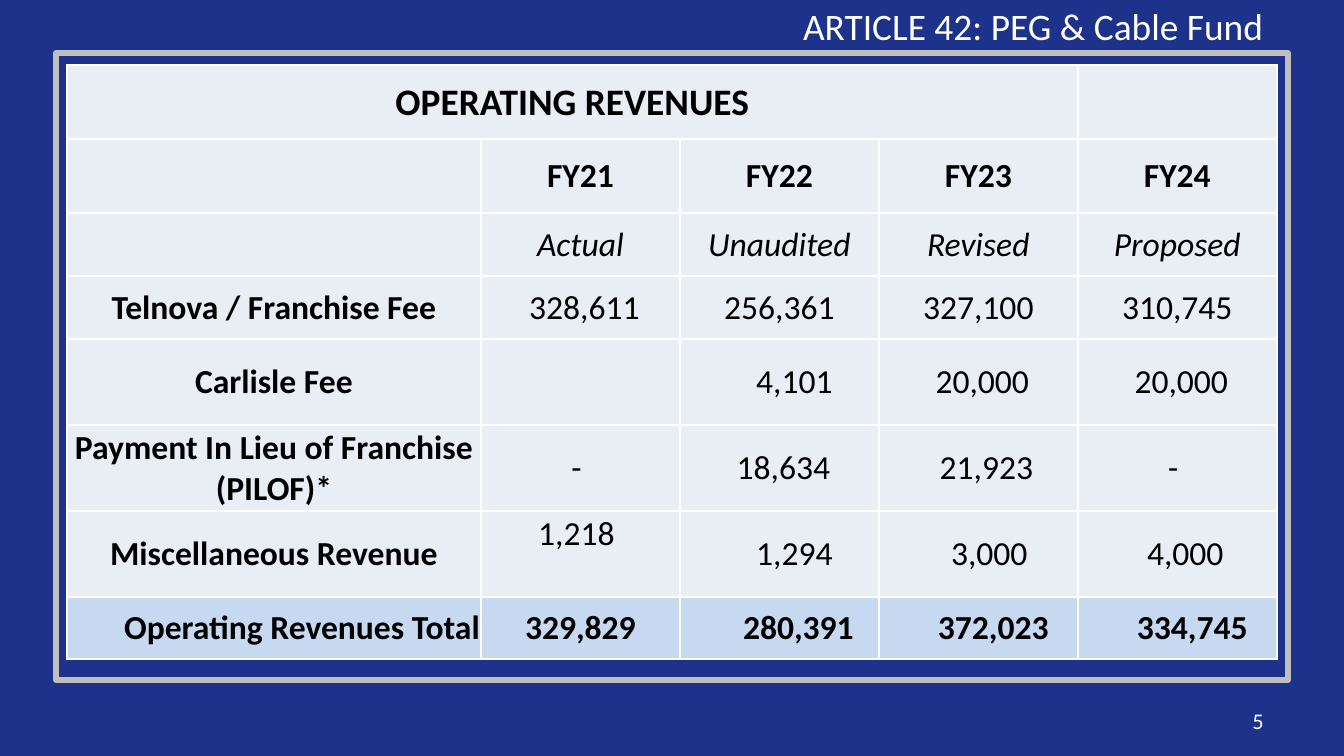
from dataclasses import dataclass

from lxml import etree
from pptx import Presentation
from pptx import util as u
from pptx.dml.color import RGBColor
from pptx.enum import shapes, text
from pptx.oxml.ns import qn

PX = 914400 / 134.4
CENTER, RIGHT = text.PP_ALIGN.CENTER, text.PP_ALIGN.RIGHT


@dataclass(frozen=True)
class Theme:
    font: str = "Calibri"
    background: str = "1D328B"
    frame: str = "BFBFBF"
    light: str = "FFFFFF"
    dark: str = "000000"
    cell: str = "E9EDF4"
    total: str = "C6D9F1"
    heading_size: int = 20
    body_size: int = 18
    small_size: int = 12


THEME = Theme()
COLUMNS = [414] + [199] * 4
ROWS = [74, 74, 63, 63, 86, 86, 86, 62]
YEARS = ["", "FY21", "FY22", "FY23", "FY24"]
STATUSES = ["", "Actual", "Unaudited", "Revised", "Proposed"]
# Each amount comes with its distance in px from the centre of the column.
REVENUES = [
    ("Telnova / Franchise Fee",
     [("328,611", 4), ("256,361", 0), ("327,100", 0), ("310,745", 0)]),
    ("Carlisle Fee",
     [("", 0), ("4,101", 15), ("20,000", 4), ("20,000", 4)]),
    ("Payment In Lieu of Franchise (PILOF)*",
     [("-", -4), ("18,634", 4), ("21,923", 8), ("-", -4)]),
    ("Miscellaneous Revenue",
     [("1,218", -4), ("1,294", 15), ("3,000", 11), ("4,000", 8)]),
    ("Operating Revenues Total",
     [("329,829", 0), ("280,391", 19), ("372,023", 15), ("334,745", 15)]),
]


def px(length):
    return u.Emu(round(length * PX))


def color(value):
    return RGBColor.from_string(value)


def write(frame, words, size=THEME.body_size, ink=THEME.dark, align=CENTER,
          bold=False, italic=False):
    paragraph = frame.paragraphs[0]
    paragraph.alignment = align
    run = paragraph.add_run()
    run.text = words
    font = run.font
    font.name, font.size = THEME.font, u.Pt(size)
    font.bold, font.italic = bold, italic
    font.color.rgb = color(ink)


def place(shape, left, top, width, height):
    shape.left, shape.top = px(left), px(top)
    shape.width, shape.height = px(width), px(height)


def add_title(slide, words):
    title = slide.shapes.title
    place(title, 672, -4, 605, 59)
    frame = title.text_frame
    frame.word_wrap = True
    frame.auto_size = text.MSO_AUTO_SIZE.SHAPE_TO_FIT_TEXT
    frame.vertical_anchor = text.MSO_ANCHOR.TOP
    write(frame, words, size=THEME.heading_size, ink=THEME.light, align=RIGHT)


def add_frame(slide):
    frame = slide.shapes.add_shape(
        shapes.MSO_SHAPE.RECTANGLE, px(56), px(53), px(1232), px(627))
    frame.shadow.inherit = False
    frame.fill.background()
    frame.line.color.rgb = color(THEME.frame)
    frame.line.width = u.Pt(3)


def add_page_number(slide, number):
    box = slide.shapes.add_textbox(px(964), px(701), px(313), px(40))
    frame = box.text_frame
    frame.word_wrap = True
    frame.vertical_anchor = text.MSO_ANCHOR.MIDDLE
    write(frame, number, size=THEME.small_size, ink=THEME.light, align=RIGHT)


def add_borders(cell):
    properties = cell._tc.get_or_add_tcPr()
    for side in ("lnL", "lnR", "lnT", "lnB"):
        line = etree.SubElement(properties, qn(f"a:{side}"), w=str(u.Pt(1)))
        fill = etree.SubElement(line, qn("a:solidFill"))
        etree.SubElement(fill, qn("a:srgbClr"), val=THEME.light)


def fill_cell(cell, words, shift=0, rise=0, **style):
    """Write a cell, moving its text right by shift and up by rise px."""
    cell.vertical_anchor = text.MSO_ANCHOR.MIDDLE
    cell.margin_left = px(1 + 2 * max(shift, 0))
    cell.margin_right = px(1 + 2 * max(-shift, 0))
    cell.margin_top, cell.margin_bottom = px(1), px(2 * rise)
    if words:
        write(cell.text_frame, words, **style)


def add_revenue_table(slide):
    table = slide.shapes.add_table(
        len(ROWS), len(COLUMNS), px(67), px(65),
        px(sum(COLUMNS)), px(sum(ROWS))).table
    for column, width in zip(table.columns, COLUMNS):
        column.width = px(width)
    last = len(ROWS) - 1
    for index, (row, height) in enumerate(zip(table.rows, ROWS)):
        row.height = px(height)
        for cell in row.cells:
            add_borders(cell)
            cell.fill.solid()
            cell.fill.fore_color.rgb = color(
                THEME.total if index == last else THEME.cell)

    table.cell(0, 0).merge(table.cell(0, 3))
    fill_cell(table.cell(0, 0), "OPERATING REVENUES",
              size=THEME.heading_size, bold=True)
    for column, (year, status) in enumerate(zip(YEARS, STATUSES)):
        fill_cell(table.cell(1, column), year, bold=True)
        fill_cell(table.cell(2, column), status, italic=True)
    for row, (label, amounts) in enumerate(REVENUES, start=3):
        is_total = row == last
        fill_cell(table.cell(row, 0), label, bold=True,
                  align=RIGHT if is_total else CENTER)
        for column, (amount, shift) in enumerate(amounts, start=1):
            rise = 20 if amount == "1,218" else 0
            fill_cell(table.cell(row, column), amount, shift, rise,
                      bold=is_total)


def main():
    presentation = Presentation()
    presentation.slide_width, presentation.slide_height = px(1344), px(756)
    slide = presentation.slides.add_slide(presentation.slide_layouts[5])
    slide.background.fill.solid()
    slide.background.fill.fore_color.rgb = color(THEME.background)
    add_frame(slide)
    add_page_number(slide, "5")
    add_title(slide, "ARTICLE 42: PEG & Cable Fund")
    add_revenue_table(slide)
    presentation.save("out.pptx")


if __name__ == "__main__":
    main()
